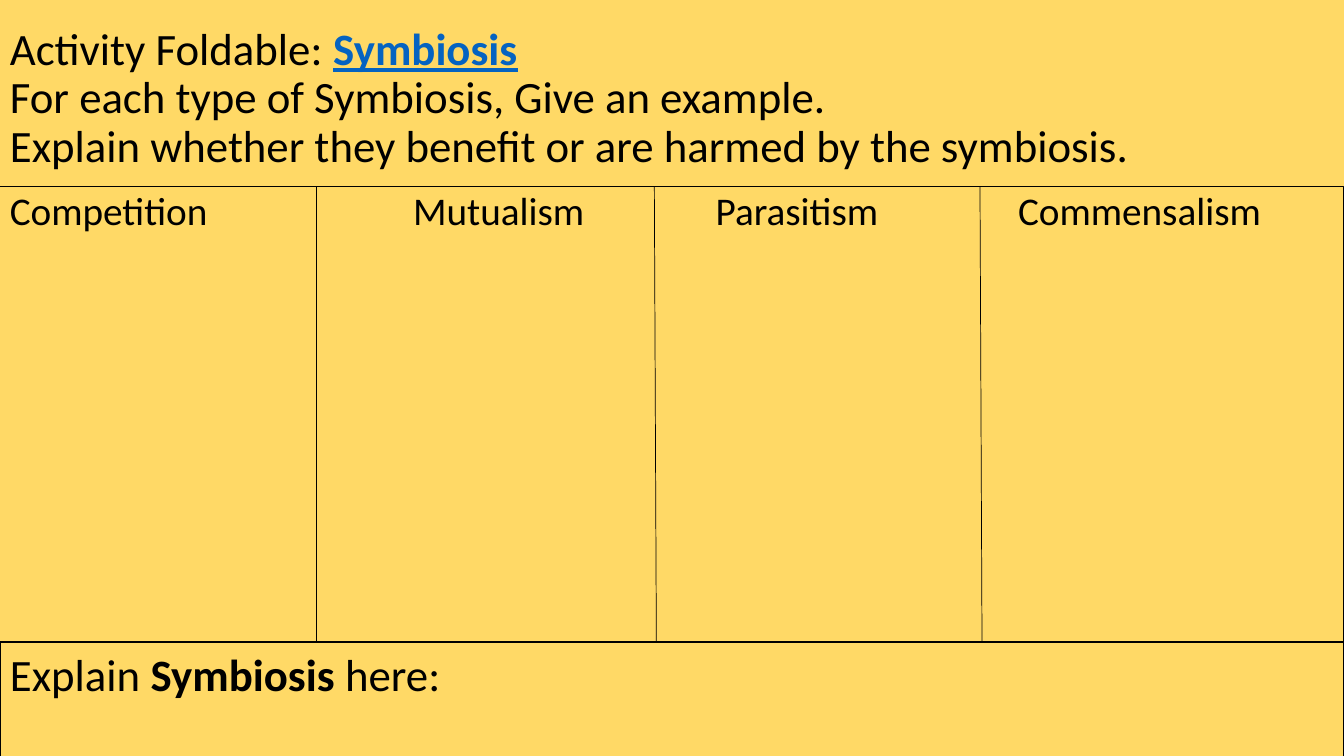
from lxml import etree
from pptx import Presentation
from pptx import util as u
from pptx.dml.color import RGBColor
from pptx.enum import shapes, text
from pptx.oxml.ns import qn

WIDTH, HEIGHT = 13.33, 7.5
GRID_TOP, GRID_BOTTOM = 1.85, 6.37
BLACK, LINK_BLUE, YELLOW = "000000", "0563C1", "FFD966"
TYPES = ["Competition", "Mutualism", "Parasitism", "Commensalism"]
TAB_STOPS = [4, 7, 10]
DIVIDERS = [(3.14, 3.14), (6.49, 6.51), (9.72, 9.74)]  # x at top, x at bottom


def color(value):
    return RGBColor.from_string(value)


def add_span(para, words, size, bold=False, underline=False, ink=BLACK):
    span = para.add_run()
    span.text = words
    span.font.name = "Calibri"
    span.font.size = u.Pt(size)
    span.font.bold = bold
    span.font.underline = underline
    span.font.color.rgb = color(ink)


def add_text_box(page, top, height, anchor):
    box = page.shapes.add_textbox(0, u.Inches(top), u.Inches(WIDTH), u.Inches(height))
    box.text_frame.word_wrap = True
    box.text_frame.vertical_anchor = anchor
    return box.text_frame


def add_frame(page, top, height, weight):
    frame = page.shapes.add_shape(shapes.MSO_SHAPE.RECTANGLE, 0, u.Inches(top),
                                  u.Inches(WIDTH), u.Inches(height))
    frame.shadow.inherit = False
    frame.fill.background()
    frame.line.color.rgb = color(BLACK)
    frame.line.width = u.Pt(weight)
    return frame.text_frame


def add_divider(page, top_x, bottom_x):
    line = page.shapes.add_connector(shapes.MSO_CONNECTOR.STRAIGHT,
                                     u.Inches(top_x), u.Inches(GRID_TOP),
                                     u.Inches(bottom_x), u.Inches(GRID_BOTTOM))
    line.line.color.rgb = color(BLACK)
    line.line.width = u.Pt(0.5)
    etree.SubElement(line._element.spPr, qn("a:effectLst"))


def set_tab_stops(para, stops):
    tabs = etree.SubElement(para._p.get_or_add_pPr(), qn("a:tabLst"))
    for stop in stops:
        etree.SubElement(tabs, qn("a:tab"), pos=str(u.Inches(stop)), algn="l")


def add_title(page):
    title = add_text_box(page, 0.12, 1.73, text.MSO_ANCHOR.MIDDLE)
    para = title.paragraphs[0]
    para.line_spacing = 0.9
    add_span(para, "Activity Foldable: ", 32)
    add_span(para, "Symbiosis", 32, bold=True, underline=True, ink=LINK_BLUE)
    for sentence in ["For each type of Symbiosis, Give an example.",
                     "Explain whether they benefit or are harmed by the symbiosis."]:
        para.add_line_break()
        add_span(para, sentence, 32)


def add_headings(page):
    headings = add_text_box(page, GRID_TOP, 0.6, text.MSO_ANCHOR.TOP)
    para = headings.paragraphs[0]
    para.line_spacing = 0.9
    set_tab_stops(para, TAB_STOPS)
    add_span(para, "\t".join(TYPES), 28)


def add_explanation(page):
    frame = add_frame(page, GRID_BOTTOM, 1.18, 1)
    frame.word_wrap = True
    frame.vertical_anchor = text.MSO_ANCHOR.TOP
    para = frame.paragraphs[0]
    para.alignment = text.PP_ALIGN.LEFT
    add_span(para, "Explain ", 32)
    add_span(para, "Symbiosis", 32, bold=True)
    add_span(para, " here:", 32)


def main():
    deck = Presentation()
    deck.slide_width, deck.slide_height = u.Inches(WIDTH), u.Inches(HEIGHT)
    page = deck.slides.add_slide(deck.slide_layouts[6])
    page.background.fill.solid()
    page.background.fill.fore_color.rgb = color(YELLOW)

    # Instructions and column headings
    add_title(page)
    add_headings(page)

    # Answer area
    add_explanation(page)
    add_frame(page, GRID_TOP, GRID_BOTTOM - GRID_TOP, 0.75)
    for top_x, bottom_x in DIVIDERS:
        add_divider(page, top_x, bottom_x)

    deck.save("out.pptx")


if __name__ == "__main__":
    main()
